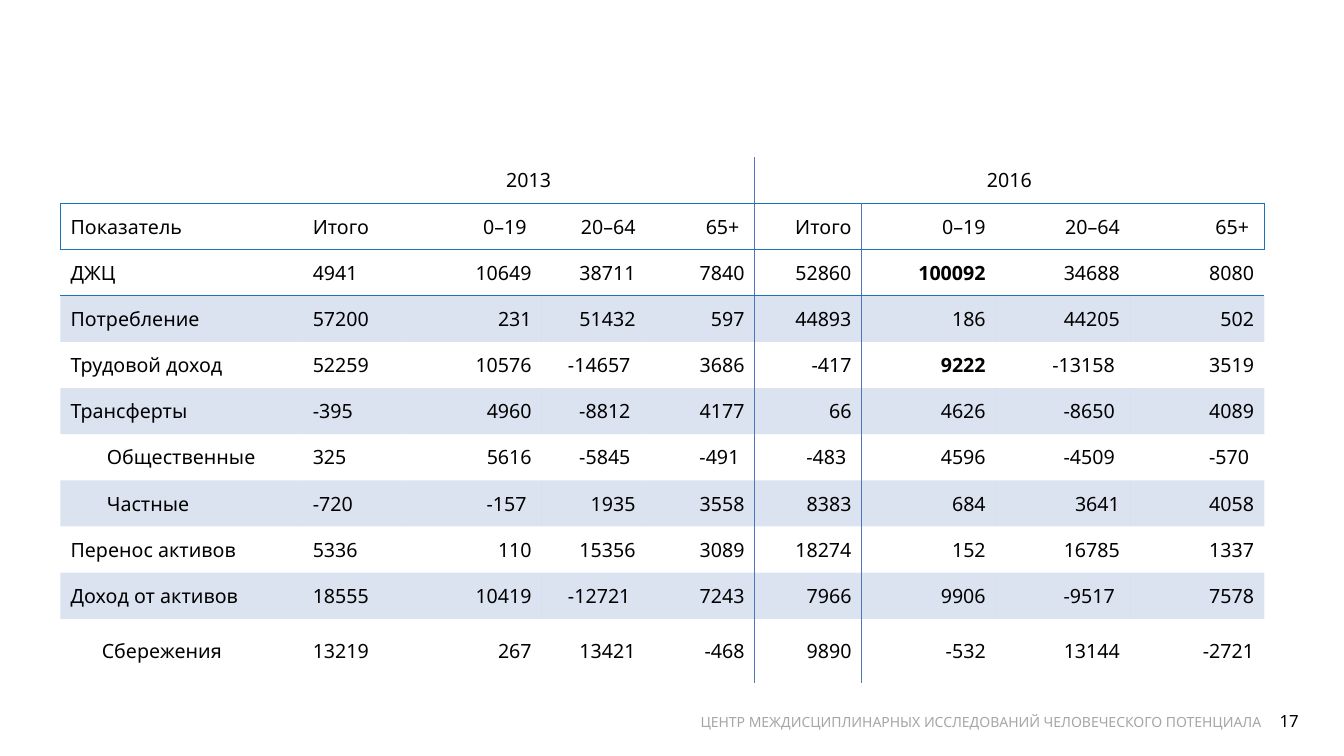
from lxml.etree import SubElement
from pptx import Presentation
from pptx.dml.color import RGBColor
from pptx.enum.text import MSO_ANCHOR, PP_ALIGN
from pptx.oxml import parse_xml
from pptx.oxml.ns import nsdecls, qn
from pptx.util import Inches, Pt

FONT = "Noto Sans"
BLACK, GRAY = "000000", "A6A6A6"
RULE, ACCENT = "1C73B9", "4B76B9"
NO_STYLE = "{2D5ABB26-0587-4C30-8999-92F81FD0307C}"

COLUMN_WIDTHS = [2.4, 1.01, 1.36, 1.03, 1.08, 1.06, 1.33, 1.33, 1.33]
ROW_HEIGHTS = [0.46] * 10 + [0.64]
YEARS = {1: "2013", 5: "2016"}
YEAR_SPAN = 4
HEADER = ["Показатель", "Итого", "0–19 ", "20–64", "65+ ",
          "Итого", "0–19", "20–64", "65+ "]
INDICATORS = [
    ["ДЖЦ", "4941", "10649", "38711", "7840", "52860", "100092", "34688", "8080"],
    ["Потребление", "57200", "231", "51432", "597", "44893", "186", "44205", "502"],
    ["Трудовой доход", "52259", "10576", "-14657 ", "3686", "-417", "9222", "-13158 ", "3519"],
    ["Трансферты", "-395", "4960", "-8812 ", "4177", "66", "4626", "-8650 ", "4089"],
    ["Общественные", "325", "5616", "-5845 ", "-491 ", "-483 ", "4596", "-4509 ", "-570 "],
    ["Частные", "-720", "-157 ", "1935", "3558", "8383", "684", "3641", "4058"],
    ["Перенос активов", "5336", "110", "15356", "3089", "18274", "152", "16785", "1337"],
    ["Доход от активов", "18555", "10419", "-12721 ", "7243", "7966", "9906", "-9517 ", "7578"],
    ["Сбережения", "13219", "267", "13421", "-468", "9890", "-532", "13144", "-2721"],
]
INDENTS = {"Общественные": 0.36, "Частные": 0.36, "Сбережения": 0.31}
HIGHLIGHTS = {"100092", "9222"}


def rgb(color):
    return RGBColor.from_string(color)


def write(frame, text, size=14, color=BLACK, bold=False, align=PP_ALIGN.LEFT, indent=0):
    paragraph = frame.paragraphs[0]
    paragraph.alignment = align
    if indent:
        paragraph._p.get_or_add_pPr().set("marL", str(Inches(indent)))
    run = paragraph.add_run()
    run.text = text
    run.font.name = FONT
    run.font.size = Pt(size)
    run.font.bold = bold
    run.font.color.rgb = rgb(color)


def set_borders(cell, borders):
    """Borders map a side (L, R, T, B) to a colour; they precede the fill."""
    properties = cell._tc.get_or_add_tcPr()
    sides = [side for side in "LRTB" if side in borders]
    for position, side in enumerate(sides):
        properties.insert(position, parse_xml(
            f'<a:ln{side} {nsdecls("a")} w="{Pt(1)}"><a:solidFill>'
            f'<a:srgbClr val="{borders[side]}"/></a:solidFill></a:ln{side}>'))


def set_band(cell, banded):
    if not banded:
        cell.fill.background()
        return
    cell.fill.solid()
    cell.fill.fore_color.rgb = rgb(ACCENT)
    tint = cell._tc.tcPr.find(qn("a:solidFill")).find(qn("a:srgbClr"))
    SubElement(tint, qn("a:alpha")).set("val", "20000")


def cell_borders(row, column):
    borders = {}
    if row in (1, 2):
        borders["T"] = RULE
    if row in (0, 1):
        borders["B"] = RULE
    # Divider between the two years
    if column == 4:
        borders["R"] = ACCENT
    if column == 5:
        borders["L"] = ACCENT
    # Ends of the header frame
    if row == 1 and column == 0:
        borders["L"] = RULE
    if row == 1 and column == 8:
        borders["R"] = RULE
    return borders


def add_indicator_table(slide, left, top, width, height):
    rows = [[YEARS.get(column, "") for column in range(len(HEADER))], HEADER, *INDICATORS]
    table = slide.shapes.add_table(len(rows), len(HEADER), Inches(left), Inches(top),
                                   Inches(width), Inches(height)).table
    table.first_row = table.horz_banding = False
    table._tbl.tblPr.find(qn("a:tableStyleId")).text = NO_STYLE

    # Grid, scaled to the given box
    for column, share in zip(table.columns, COLUMN_WIDTHS):
        column.width = Inches(width * share / sum(COLUMN_WIDTHS))
    for row, share in zip(table.rows, ROW_HEIGHTS):
        row.height = Inches(height * share / sum(ROW_HEIGHTS))
    for start in YEARS:
        table.cell(0, start).merge(table.cell(0, start + YEAR_SPAN - 1))

    # Contents
    for r, values in enumerate(rows):
        for c, value in enumerate(values):
            cell = table.cell(r, c)
            cell.vertical_anchor = MSO_ANCHOR.MIDDLE
            set_band(cell, r >= 3 and r % 2 == 1)
            set_borders(cell, cell_borders(r, c))
            if value:
                align = (PP_ALIGN.CENTER if r == 0
                         else PP_ALIGN.LEFT if c < 2 else PP_ALIGN.RIGHT)
                write(cell.text_frame, value, align=align,
                      bold=value in HIGHLIGHTS, indent=INDENTS.get(value, 0))


def add_label(slide, left, top, width, height, text, **text_format):
    frame = slide.shapes.add_textbox(Inches(left), Inches(top),
                                     Inches(width), Inches(height)).text_frame
    frame.word_wrap = True
    frame.vertical_anchor = MSO_ANCHOR.MIDDLE
    write(frame, text, **text_format)


def add_footer(slide, left, top, width, height):
    number_width = 0.54
    add_label(slide, left, top + 0.1, 5.84, 0.23,
              "ЦЕНТР МЕЖДИСЦИПЛИНАРНЫХ ИССЛЕДОВАНИЙ ЧЕЛОВЕЧЕСКОГО ПОТЕНЦИАЛА",
              size=10, color=GRAY)
    add_label(slide, left + width - number_width, top, number_width, height,
              "17", size=12, align=PP_ALIGN.RIGHT)


def main():
    presentation = Presentation()
    presentation.slide_width = Inches(13.33)
    presentation.slide_height = Inches(7.5)
    slide = presentation.slides.add_slide(presentation.slide_layouts[6])
    add_footer(slide, 6.85, 6.95, 6.13, 0.4)
    add_indicator_table(slide, 0.6, 1.56, 11.94, 5.22)
    presentation.save("out.pptx")


if __name__ == "__main__":
    main()
